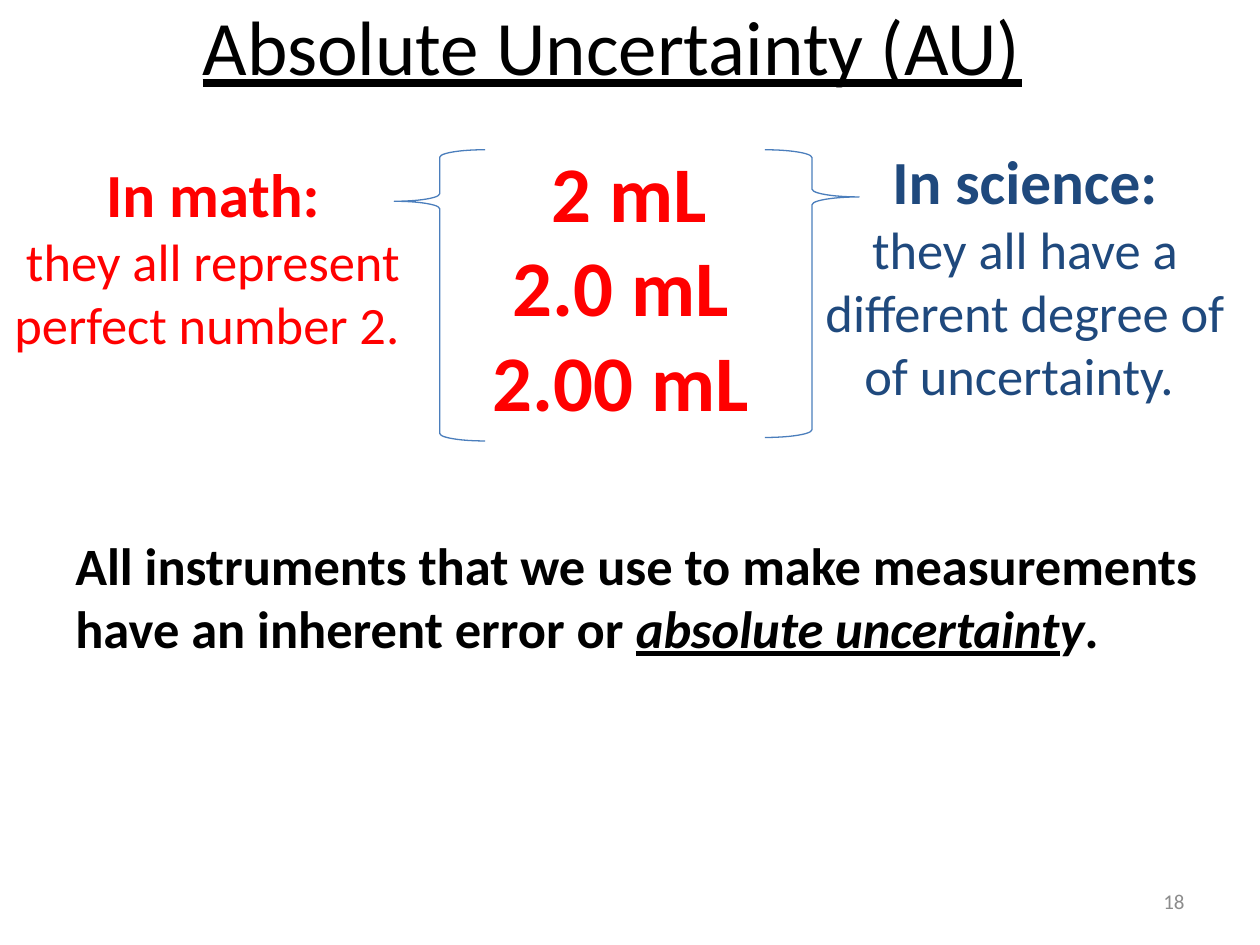
from dataclasses import dataclass
from typing import NamedTuple

from pptx import Presentation
from pptx.dml.color import RGBColor
from pptx.enum import shapes, text
from pptx.util import Cm, Pt


@dataclass(frozen=True)
class Theme:
    font: str = "Calibri"
    black: str = "000000"
    red: str = "FF0000"
    navy: str = "1F497D"
    grey: str = "8C8C8C"
    brace: str = "4B7EBC"
    title: int = 44
    reading: int = 45
    heading: int = 35
    body: int = 30
    number: int = 12
    brace_width: float = 0.75


class Box(NamedTuple):
    left: float
    top: float
    width: float
    height: float

    def lengths(self) -> list:
        return [Cm(value) for value in self]


class View(NamedTuple):
    box: Box
    heading: str
    statement: str
    color: str


class Brace(NamedTuple):
    preset: shapes.MSO_SHAPE
    box: Box
    point: float


THEME = Theme()
CENTER, LEFT, RIGHT = text.PP_ALIGN.CENTER, text.PP_ALIGN.LEFT, text.PP_ALIGN.RIGHT

VIEWS = [
    View(Box(0, 3.02, 8.59, 4.32), "In math:",
         "they all represent perfect number 2. ", THEME.red),
    View(Box(15.93, 2.77, 9.47, 5.59), "In science:",
         "they all have a different degree of of uncertainty. ", THEME.navy),
]
READINGS = ["2 mL", "2.0 mL ", "2.00 mL "]
BRACES = [
    Brace(shapes.MSO_SHAPE.RIGHT_BRACE, Box(15.42, 3.02, 1.9, 5.8), 0.164),
    Brace(shapes.MSO_SHAPE.LEFT_BRACE, Box(7.95, 3.02, 1.83, 5.87), 0.177),
]


def add_run(paragraph, content: str, *, size: int, color: str = THEME.black,
            bold: bool = False, italic: bool = False, underline: bool = False) -> None:
    run = paragraph.add_run()
    run.text = content
    font = run.font
    font.name, font.size = THEME.font, Pt(size)
    font.bold, font.italic, font.underline = bold, italic, underline
    font.color.rgb = RGBColor.from_string(color)


def add_text_box(slide, box: Box, count: int = 1, align=LEFT,
                 anchor=text.MSO_ANCHOR.TOP) -> list:
    """Add a wrapping text box and return its empty paragraphs."""
    frame = slide.shapes.add_textbox(*box.lengths()).text_frame
    frame.word_wrap = True
    frame.vertical_anchor = anchor
    for _ in range(count - 1):
        frame.add_paragraph()
    for paragraph in frame.paragraphs:
        paragraph.alignment = align
    return list(frame.paragraphs)


def set_title(slide, box: Box, content: str) -> None:
    title = slide.shapes.title
    title.left, title.top, title.width, title.height = box.lengths()
    title.text_frame.vertical_anchor = text.MSO_ANCHOR.MIDDLE
    paragraph = title.text_frame.paragraphs[0]
    paragraph.alignment = CENTER
    add_run(paragraph, content, size=THEME.title, underline=True)


def add_view(slide, view: View) -> None:
    heading, statement = add_text_box(slide, view.box, 2, CENTER)
    add_run(heading, view.heading, size=THEME.heading, color=view.color, bold=True)
    add_run(statement, view.statement, size=THEME.body, color=view.color)


def add_brace(slide, brace: Brace) -> None:
    shape = slide.shapes.add_shape(brace.preset, *brace.box.lengths())
    shape.adjustments[0] = 0.083
    shape.adjustments[1] = brace.point
    shape.shadow.inherit = False
    shape.fill.background()
    shape.line.color.rgb = RGBColor.from_string(THEME.brace)
    shape.line.width = Pt(THEME.brace_width)


def main() -> None:
    presentation = Presentation()
    presentation.slide_width, presentation.slide_height = Cm(25.4), Cm(19.05)
    slide = presentation.slides.add_slide(presentation.slide_layouts[5])
    set_title(slide, Box(0.91, -0.69, 22.86, 3.18), "Absolute Uncertainty (AU)")

    [conclusion] = add_text_box(slide, Box(1.27, 10.62, 23.57, 2.82))
    add_run(conclusion, "All instruments that we use to make measurements "
            "have an inherent error or ", size=THEME.body, bold=True)
    add_run(conclusion, "absolute uncertaint", size=THEME.body,
            bold=True, italic=True, underline=True)
    add_run(conclusion, "y", size=THEME.body, bold=True, italic=True)
    add_run(conclusion, ".", size=THEME.body, bold=True)

    [number] = add_text_box(slide, Box(18.21, 17.65, 5.92, 1.02), align=RIGHT,
                            anchor=text.MSO_ANCHOR.MIDDLE)
    add_run(number, "18", size=THEME.number, color=THEME.grey)

    rows = add_text_box(slide, Box(9.45, 2.77, 6.48, 6.02), len(READINGS), CENTER)
    for paragraph, reading in zip(rows, READINGS):
        add_run(paragraph, reading, size=THEME.reading, color=THEME.red, bold=True)

    for view in VIEWS:
        add_view(slide, view)
    for brace in BRACES:
        add_brace(slide, brace)
    presentation.save("out.pptx")


if __name__ == "__main__":
    main()
